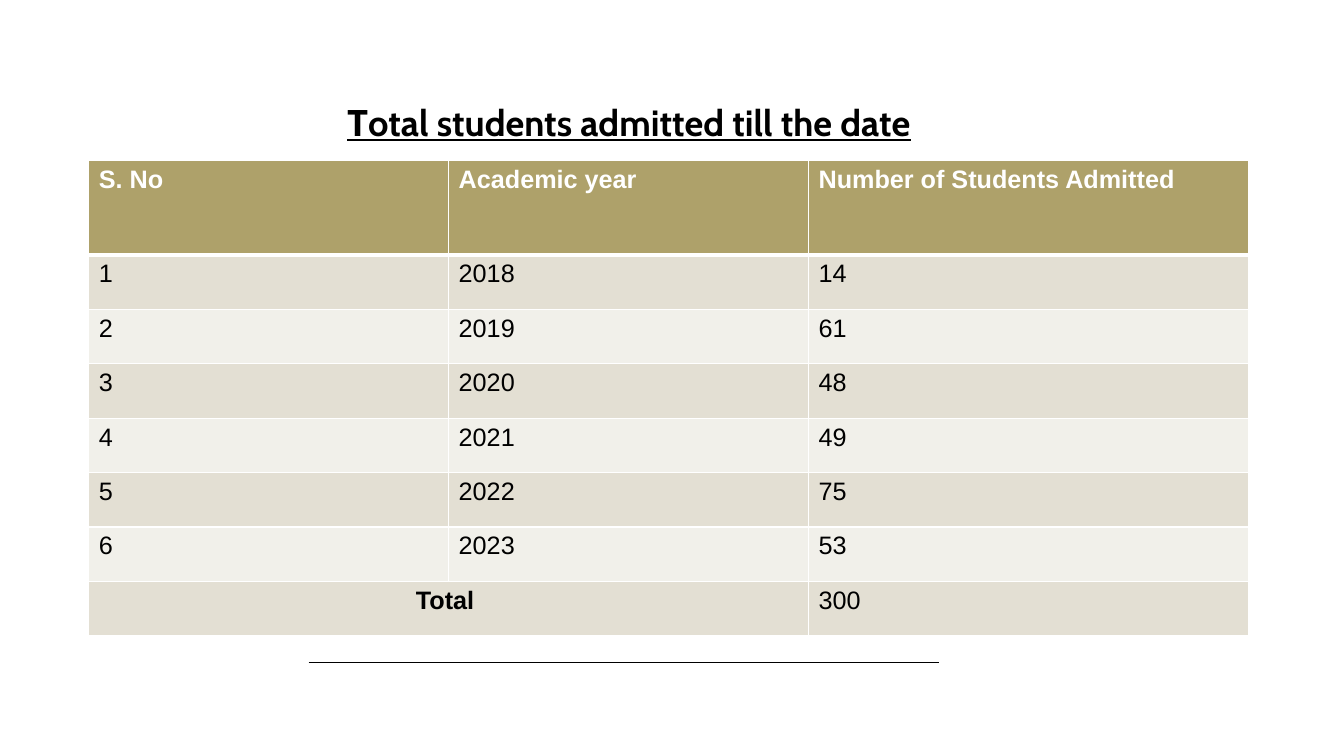
from lxml.etree import SubElement
from pptx import Presentation
from pptx.dml.color import RGBColor
from pptx.enum.shapes import MSO_CONNECTOR
from pptx.enum.text import MSO_ANCHOR, MSO_AUTO_SIZE, PP_ALIGN
from pptx.oxml.ns import qn
from pptx.util import Inches, Pt

COLORS = {
    "text": "000000",
    "white": "FFFFFF",
    "header": "AEA16A",
    "odd_row": "E3DFD3",
    "even_row": "F1F0EA",
}
HEADINGS = ["S. No", "Academic year", "Number of Students Admitted"]
ADMISSIONS = {2018: 14, 2019: 61, 2020: 48, 2021: 49, 2022: 75, 2023: 53}
COLUMN_WIDTHS = [3.57, 3.57, 4.36]
HEADER_HEIGHT = 0.94
ROW_HEIGHT = 0.54


def color(name):
    return RGBColor.from_string(COLORS[name])


def add_text(paragraph, text, font="Arial", size=18, bold=False,
             underline=False, fill="text", align=PP_ALIGN.LEFT):
    paragraph.alignment = align
    run = paragraph.add_run()
    run.text = text
    run.font.name = font
    run.font.size = Pt(size)
    run.font.bold = bold
    run.font.underline = underline
    run.font.color.rgb = color(fill)


def format_title(slide):
    title = slide.shapes.title
    title.left, title.top = Inches(0.71), Inches(0.99)
    title.width, title.height = Inches(11.06), Inches(5.33)
    frame = title.text_frame
    frame.word_wrap = True
    frame.auto_size = MSO_AUTO_SIZE.NONE
    frame.vertical_anchor = MSO_ANCHOR.TOP
    paragraph = frame.paragraphs[0]
    paragraph.line_spacing = 0.9
    # The initial letter has its own font
    for text, font in [("T", "Open Sans"),
                       ("otal students admitted till the date", "Cabin")]:
        add_text(paragraph, text, font=font, size=26, bold=True,
                 underline=True, align=PP_ALIGN.CENTER)


def add_rule(slide):
    line = slide.shapes.add_connector(
        MSO_CONNECTOR.STRAIGHT,
        Inches(3.06), Inches(6.57), Inches(9.31), Inches(6.57))
    line.line.color.rgb = color("text")
    line.line.width = Pt(1)
    SubElement(line._element.spPr, qn("a:effectLst"))


def set_borders(cell, bottom=1, top=1):
    properties = cell._tc.get_or_add_tcPr()
    widths = {"a:lnL": 1, "a:lnR": 1, "a:lnT": top, "a:lnB": bottom}
    for tag, width in widths.items():
        border = SubElement(properties, qn(tag), w=str(Pt(width)))
        fill = SubElement(border, qn("a:solidFill"))
        SubElement(fill, qn("a:srgbClr"), val=COLORS["white"])


def style_cell(cell, fill, **borders):
    # Borders must precede the fill in the cell properties
    set_borders(cell, **borders)
    cell.fill.solid()
    cell.fill.fore_color.rgb = color(fill)


def add_admissions_table(slide):
    body = [[number, year, count]
            for number, (year, count) in enumerate(ADMISSIONS.items(), 1)]
    rows = [HEADINGS, *body, ["Total ", "", sum(ADMISSIONS.values())]]
    last = len(rows) - 1
    table = slide.shapes.add_table(
        len(rows), len(HEADINGS), Inches(0.88), Inches(1.59),
        Inches(sum(COLUMN_WIDTHS)),
        Inches(HEADER_HEIGHT + ROW_HEIGHT * last)).table
    for column, width in zip(table.columns, COLUMN_WIDTHS):
        column.width = Inches(width)

    for row_index, values in enumerate(rows):
        header = row_index == 0
        table.rows[row_index].height = Inches(
            HEADER_HEIGHT if header else ROW_HEIGHT)
        band = "odd_row" if row_index % 2 else "even_row"
        for column_index, value in enumerate(values):
            cell = table.cell(row_index, column_index)
            style_cell(cell, "header" if header else band,
                       bottom=3 if header else 1,
                       top=3 if row_index == 1 else 1)
            if value == "":
                continue
            total_label = row_index == last and column_index == 0
            add_text(cell.text_frame.paragraphs[0], str(value),
                     bold=header or total_label,
                     fill="white" if header else "text",
                     align=PP_ALIGN.CENTER if total_label else PP_ALIGN.LEFT)

    # The total label spans the first two columns
    table.cell(last, 0).merge(table.cell(last, 1))


def main():
    presentation = Presentation()
    presentation.slide_width = Inches(13.33)
    presentation.slide_height = Inches(7.5)
    slide = presentation.slides.add_slide(presentation.slide_layouts[5])
    slide.background.fill.solid()
    slide.background.fill.fore_color.rgb = color("white")

    format_title(slide)
    add_rule(slide)
    add_admissions_table(slide)
    presentation.save("out.pptx")


if __name__ == "__main__":
    main()
